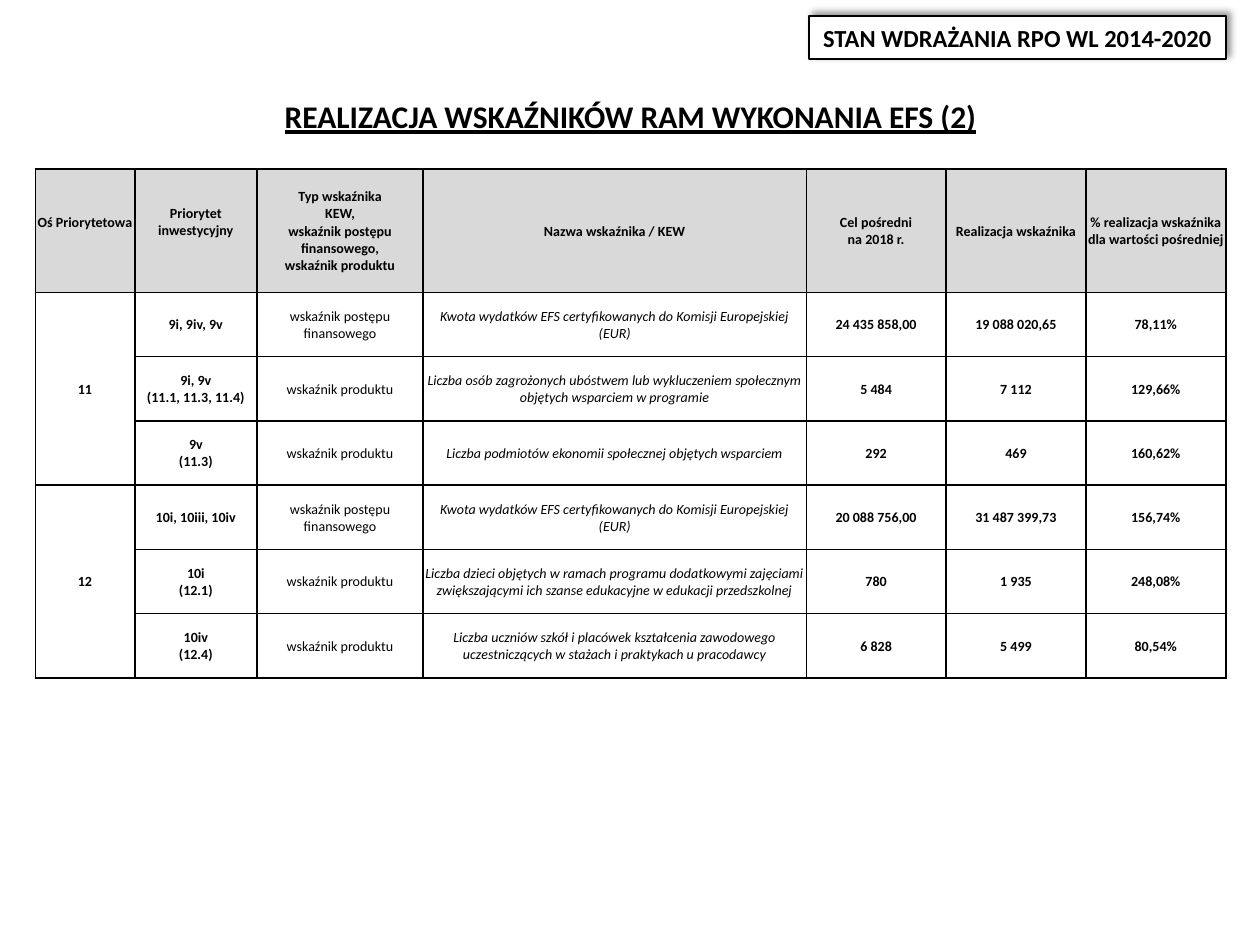
from lxml import etree
from pptx import Presentation
from pptx.dml.color import RGBColor
from pptx.enum.shapes import MSO_SHAPE
from pptx.enum.text import MSO_ANCHOR, MSO_AUTO_SIZE, PP_ALIGN
from pptx.oxml import parse_xml
from pptx.util import Inches, Pt

RECTANGLE = MSO_SHAPE.RECTANGLE
MIDDLE = MSO_ANCHOR.MIDDLE
FIT_SHAPE = MSO_AUTO_SIZE.SHAPE_TO_FIT_TEXT
CENTER = PP_ALIGN.CENTER

DRAWING = "http://schemas.openxmlformats.org/drawingml/2006/main"
COLORS = {"ink": "000000", "paper": "FFFFFF", "header": "D9D9D9"}

COLUMN_WIDTHS = [7.9, 9.7, 13.2, 30.4, 11.1, 11.1, 11.1]
HEADER_HEIGHT, ROW_HEIGHT = 9.8, 5.1
AXIS_COLUMN, PRIORITY_COLUMN, TYPE_COLUMN, NAME_COLUMN = range(4)
HEADERS = [
    "Oś Priorytetowa",
    "Priorytet inwestycyjny",
    "Typ wskaźnika\vKEW,\vwskaźnik postępu finansowego,\vwskaźnik produktu",
    "Nazwa wskaźnika / KEW",
    "Cel pośredni\vna 2018 r.",
    "Realizacja wskaźnika",
    "% realizacja wskaźnika dla wartości pośredniej",
]
FINANCIAL = "wskaźnik postępu finansowego"
PRODUCT = "wskaźnik produktu"
CERTIFIED = "Kwota wydatków EFS certyfikowanych do Komisji Europejskiej (EUR)"
INDICATORS = {
    "11": [
        ("9i, 9iv, 9v", FINANCIAL, CERTIFIED, "24 435 858,00", "19 088 020,65", "78,11%"),
        ("9i, 9v\v(11.1, 11.3, 11.4)", PRODUCT,
         "Liczba osób zagrożonych ubóstwem lub wykluczeniem społecznym objętych wsparciem w programie",
         "5 484", "7 112", "129,66%"),
        ("9v\v(11.3)", PRODUCT, "Liczba podmiotów ekonomii społecznej objętych wsparciem",
         "292", "469", "160,62%"),
    ],
    "12": [
        ("10i, 10iii, 10iv", FINANCIAL, CERTIFIED, "20 088 756,00", "31 487 399,73", "156,74%"),
        ("10i\v(12.1)", PRODUCT,
         "Liczba dzieci objętych w ramach programu dodatkowymi zajęciami "
         "zwiększającymi ich szanse edukacyjne w edukacji przedszkolnej",
         "780", "1 935", "248,08%"),
        ("10iv\v(12.4)", PRODUCT,
         "Liczba uczniów szkół i placówek kształcenia zawodowego "
         "uczestniczących w stażach i praktykach u pracodawcy",
         "6 828", "5 499", "80,54%"),
    ],
}


def color(name):
    return RGBColor.from_string(COLORS[name])


class SlideBuilder:
    """Places elements on a grid of 100 columns by 75 rows."""

    font_name = "Calibri"
    line_width = Pt(1)

    def __init__(self, presentation):
        self.slide = presentation.slides.add_slide(presentation.slide_layouts[6])
        self.unit = presentation.slide_width / 100

    def grid(self, *counts):
        return [round(count * self.unit) for count in counts]

    def set_text(self, text_frame, text, size, bold=True, italic=False, underline=False):
        paragraph = text_frame.paragraphs[0]
        paragraph.text = text
        paragraph.alignment = CENTER
        font = paragraph.font
        font.name, font.size = self.font_name, Pt(size)
        font.bold, font.italic, font.underline = bold, italic, underline
        font.color.rgb = color("ink")
        return paragraph

    def title(self, text, *box):
        text_frame = self.slide.shapes.add_textbox(*self.grid(*box)).text_frame
        text_frame.word_wrap = True
        text_frame.auto_size = FIT_SHAPE
        self.set_text(text_frame, text, 18, underline=True).line_spacing = 1.14

    def banner(self, text, *box):
        shape = self.slide.shapes.add_shape(RECTANGLE, *self.grid(*box))
        shape.fill.solid()
        shape.fill.fore_color.rgb = color("paper")
        shape.line.color.rgb = color("ink")
        shape.line.width = self.line_width
        shape.shadow.inherit = False
        effects = shape.element.spPr.find(f"{{{DRAWING}}}effectLst")
        effects.append(parse_xml(
            f'<a:outerShdw xmlns:a="{DRAWING}" blurRad="{Pt(4)}" dist="{Pt(3)}" '
            f'dir="{315 * 60000}" algn="bl" rotWithShape="0">'
            f'<a:srgbClr val="{COLORS["ink"]}"><a:alpha val="40000"/></a:srgbClr></a:outerShdw>'))
        shape.text_frame.word_wrap = False
        shape.text_frame.auto_size = FIT_SHAPE
        self.set_text(shape.text_frame, text, 14)

    def table(self, left, top, widths, heights):
        box = self.grid(left, top, sum(widths), sum(heights))
        table = self.slide.shapes.add_table(len(heights), len(widths), *box).table
        table.first_row = table.horz_banding = False
        for column, width in zip(table.columns, self.grid(*widths)):
            column.width = width
        for row, height in zip(table.rows, self.grid(*heights)):
            row.height = height
        for cell in table.iter_cells():
            self.border(cell)
        return table

    def border(self, cell):
        properties = cell._tc.get_or_add_tcPr()
        for position, side in enumerate(("lnL", "lnR", "lnT", "lnB")):
            line = etree.fromstring(
                f'<a:{side} xmlns:a="{DRAWING}" w="{self.line_width}"><a:solidFill>'
                f'<a:srgbClr val="{COLORS["ink"]}"/></a:solidFill></a:{side}>')
            properties.insert(position, line)

    def cell(self, cell, text, fill=None, **style):
        cell.vertical_anchor = MIDDLE
        cell.margin_left = cell.margin_right = cell.margin_top = Inches(0.01)
        cell.margin_bottom = 0
        if fill:
            cell.fill.solid()
            cell.fill.fore_color.rgb = color(fill)
        else:
            cell.fill.background()
        self.set_text(cell.text_frame, text, 8, **style)


def fill_table(builder, table):
    for column, header in enumerate(HEADERS):
        cell = table.cell(0, column)
        builder.cell(cell, header, "header")
        if column in (AXIS_COLUMN, PRIORITY_COLUMN):
            cell.margin_bottom = Inches(0.14)

    row = 1
    for axis, indicators in INDICATORS.items():
        axis_cell = table.cell(row, AXIS_COLUMN)
        axis_cell.merge(table.cell(row + len(indicators) - 1, AXIS_COLUMN))
        builder.cell(axis_cell, axis)
        for indicator in indicators:
            for column, text in enumerate(indicator, start=PRIORITY_COLUMN):
                builder.cell(
                    table.cell(row, column), text,
                    fill=None if column == PRIORITY_COLUMN else "paper",
                    bold=column not in (TYPE_COLUMN, NAME_COLUMN),
                    italic=column == NAME_COLUMN)
            row += 1


def main():
    presentation = Presentation()
    presentation.slide_width, presentation.slide_height = Inches(10), Inches(7.5)
    builder = SlideBuilder(presentation)
    builder.title("REALIZACJA WSKAŹNIKÓW RAM WYKONANIA EFS (2)", 2.8, 6.8, 94.5, 4.5)
    builder.banner("STAN WDRAŻANIA RPO WL 2014-2020", 64.2, 1.3, 33.1, 3.4)
    row_count = sum(len(indicators) for indicators in INDICATORS.values())
    heights = [HEADER_HEIGHT] + [ROW_HEIGHT] * row_count
    fill_table(builder, builder.table(2.8, 13.4, COLUMN_WIDTHS, heights))
    presentation.save("out.pptx")


if __name__ == "__main__":
    main()
